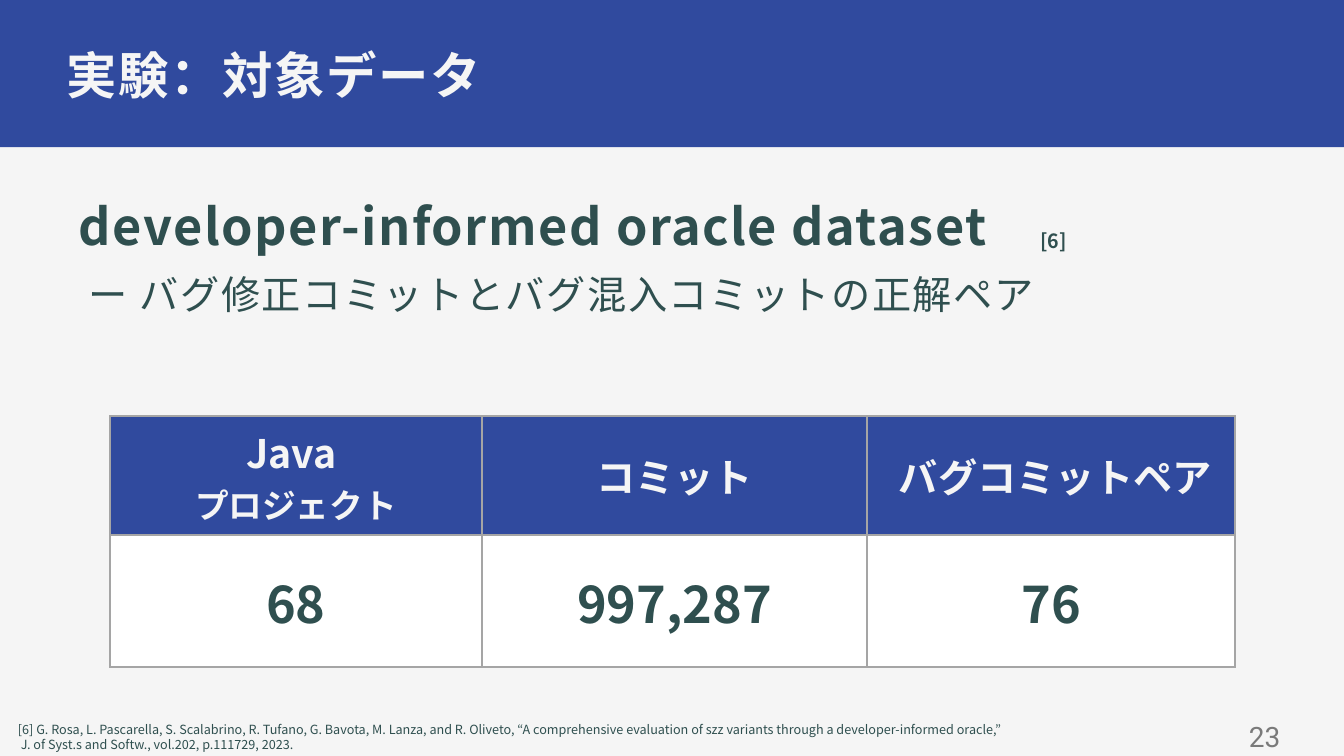
from dataclasses import dataclass

from lxml.etree import SubElement
from pptx import Presentation
from pptx.dml.color import RGBColor
from pptx.enum.shapes import MSO_SHAPE
from pptx.enum.text import MSO_ANCHOR, MSO_AUTO_SIZE, PP_ALIGN
from pptx.oxml.ns import qn
from pptx.util import Inches, Pt

COLORS = {
    "navy": "304A9E",
    "paper": "F5F5F5",
    "slate": "2F4F4F",
    "gray": "7A7A7A",
    "border": "A5A5A5",
    "white": "FFFFFF",
}
NOTO = "Noto Sans CJK JP"
ROBOTO = "Roboto"


@dataclass
class Line:
    text: str
    size: float
    color: str = "slate"
    bold: bool = False
    font: str = NOTO
    tracking: int = 0  # hundredths of a point


@dataclass
class Block:
    box: tuple[float, float, float, float]
    lines: list[Line]
    frame: dict
    paragraph: dict


def rgb(name: str) -> RGBColor:
    return RGBColor.from_string(COLORS[name])


def apply(target, formats: dict) -> None:
    for name, value in formats.items():
        setattr(target, name, value)


def margins(left: float, top: float, right: float, bottom: float) -> dict:
    return {
        "margin_left": Inches(left),
        "margin_top": Inches(top),
        "margin_right": Inches(right),
        "margin_bottom": Inches(bottom),
    }


def write_lines(frame, lines: list[Line], formats: dict) -> None:
    for index, line in enumerate(lines):
        paragraph = frame.add_paragraph() if index else frame.paragraphs[0]
        apply(paragraph, formats)
        run = paragraph.add_run()
        run.text = line.text
        apply(run.font, {"name": line.font, "size": Pt(line.size), "bold": line.bold})
        run.font.color.rgb = rgb(line.color)
        properties = run.font._element if hasattr(run.font, "_element") else run._r.get_or_add_rPr()
        SubElement(properties, qn("a:ea")).set("typeface", NOTO)
        if line.tracking:
            properties.set("spc", str(line.tracking))


def fill_block(shape, block: Block) -> None:
    sides = ("left", "top", "width", "height")
    apply(shape, {side: Inches(value) for side, value in zip(sides, block.box)})
    apply(shape.text_frame, block.frame)
    write_lines(shape.text_frame, block.lines, block.paragraph)


def remove_bullets(frame) -> None:
    for paragraph in frame.paragraphs:
        properties = paragraph._p.get_or_add_pPr()
        properties.set("marL", "0")
        properties.set("indent", "0")
        SubElement(properties, qn("a:buNone"))


def outline_cell(cell) -> None:
    """Draw all four borders; they must precede the cell's fill."""
    properties = cell._tc.get_or_add_tcPr()
    for position, side in enumerate(("lnL", "lnR", "lnT", "lnB")):
        border = SubElement(properties, qn(f"a:{side}"), w=str(Pt(1.5)))
        solid = SubElement(border, qn("a:solidFill"))
        SubElement(solid, qn("a:srgbClr"), val=COLORS["border"])
        properties.insert(position, border)


PLACEHOLDER_FRAME = {
    "word_wrap": True,
    "auto_size": MSO_AUTO_SIZE.NONE,
    "vertical_anchor": MSO_ANCHOR.TOP,
}
TITLE = Block(
    (0.58, 0.43, 12.18, 0.59),
    [Line("実験：対象データ", 36, "paper", True, ROBOTO, 110)],
    PLACEHOLDER_FRAME | margins(0.08, 0.08, 0.08, 0.06),
    {"alignment": PP_ALIGN.JUSTIFY, "line_spacing": 0.9, "space_before": Pt(16)},
)
DATASET = Block(
    (0.72, 1.94, 11.69, 1.43),
    [
        Line("developer-informed oracle dataset", 36, bold=True, tracking=110),
        Line(" ー バグ修正コミットとバグ混入コミットの正解ペア", 28, tracking=110),
    ],
    PLACEHOLDER_FRAME | margins(0.06, 0.06, 0.06, 0.06),
    {"alignment": PP_ALIGN.LEFT, "line_spacing": 0.9, "space_before": Pt(14)},
)
NOTES = [
    Block(
        (9.76, 7.11, 3, 0.39),
        [Line("23", 20, "gray", font=ROBOTO)],
        {"word_wrap": True, "vertical_anchor": MSO_ANCHOR.MIDDLE}
        | margins(0.06, 0.06, 0.06, 0.06),
        {"alignment": PP_ALIGN.RIGHT},
    ),
    Block(
        (0.08, 7.11, 10.14, 0.4),
        [
            Line(
                "[6] G. Rosa, L. Pascarella, S. Scalabrino, R. Tufano, G. Bavota, "
                "M. Lanza, and R. Oliveto, “A comprehensive evaluation of szz "
                "variants through a developer-informed oracle,”",
                9,
            ),
            Line(" J. of Syst.s and Softw., vol.202, p.111729, 2023.", 9),
        ],
        {"word_wrap": True},
        {"alignment": PP_ALIGN.LEFT},
    ),
    Block(
        (10.22, 2.22, 0.47, 0.34),
        [Line("[6]", 14, bold=True)],
        {"word_wrap": False},
        {"alignment": PP_ALIGN.LEFT},
    ),
]
COLUMN_WIDTHS = [3.69, 3.82, 3.65]
ROW_HEIGHTS = [1.18, 1.31]
HEADINGS = [
    [("Java ", 28), ("プロジェクト", 24)],
    [("コミット", 28)],
    [(" バグコミットペア", 28)],
]
COUNTS = ["68", "997,287", "76"]


def add_banner(slide) -> None:
    banner = slide.shapes.add_shape(
        MSO_SHAPE.RECTANGLE, Inches(-0.03), Inches(-0.02), Inches(13.39), Inches(1.48)
    )
    banner.shadow.inherit = False
    banner.fill.solid()
    banner.fill.fore_color.rgb = rgb("navy")
    banner.line.fill.background()
    slide.shapes.title.element.addprevious(banner.element)


def add_counts_table(slide) -> None:
    table = slide.shapes.add_table(
        len(ROW_HEIGHTS), len(COLUMN_WIDTHS),
        Inches(1.09), Inches(4.13), Inches(sum(COLUMN_WIDTHS)), Inches(sum(ROW_HEIGHTS)),
    ).table
    for column, width in zip(table.columns, COLUMN_WIDTHS):
        column.width = Inches(width)
    for row, height in zip(table.rows, ROW_HEIGHTS):
        row.height = Inches(height)
    headings = [[Line(text, size, "paper", True) for text, size in h] for h in HEADINGS]
    counts = [[Line(count, 36, bold=True)] for count in COUNTS]
    for row, contents, fill in zip(table.rows, (headings, counts), ("navy", "white")):
        for cell, lines in zip(row.cells, contents):
            cell.fill.solid()
            cell.fill.fore_color.rgb = rgb(fill)
            outline_cell(cell)
            cell.vertical_anchor = MSO_ANCHOR.MIDDLE
            write_lines(cell.text_frame, lines, {"alignment": PP_ALIGN.CENTER})


def main() -> None:
    deck = Presentation()
    apply(deck, {"slide_width": Inches(13.33), "slide_height": Inches(7.5)})
    slide = deck.slides.add_slide(deck.slide_layouts[1])
    slide.background.fill.solid()
    slide.background.fill.fore_color.rgb = rgb("paper")
    add_banner(slide)
    fill_block(slide.shapes.title, TITLE)
    dataset = slide.placeholders[1]
    fill_block(dataset, DATASET)
    remove_bullets(dataset.text_frame)
    add_counts_table(slide)
    for note in NOTES:
        fill_block(slide.shapes.add_textbox(0, 0, 0, 0), note)
    deck.save("out.pptx")


if __name__ == "__main__":
    main()
